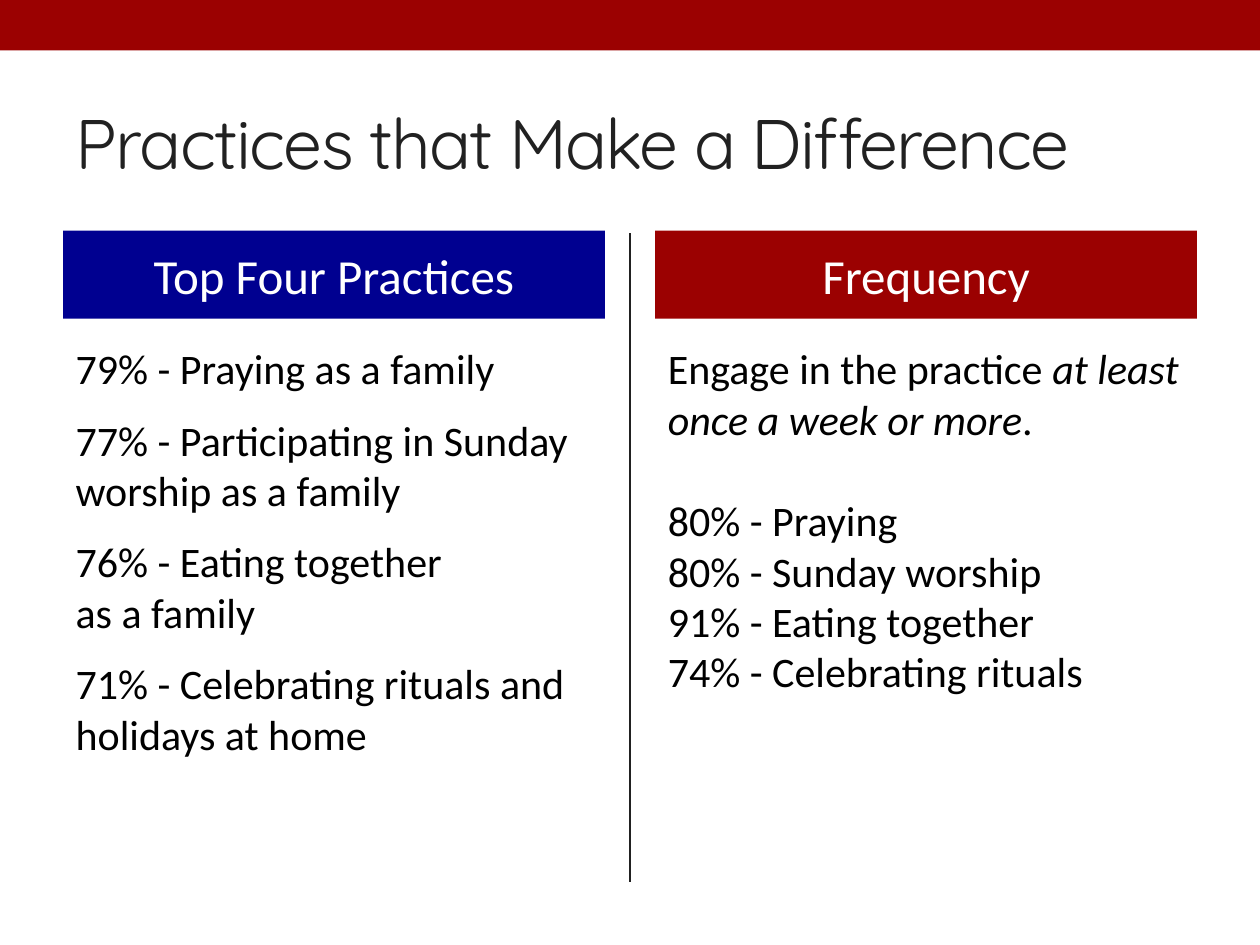
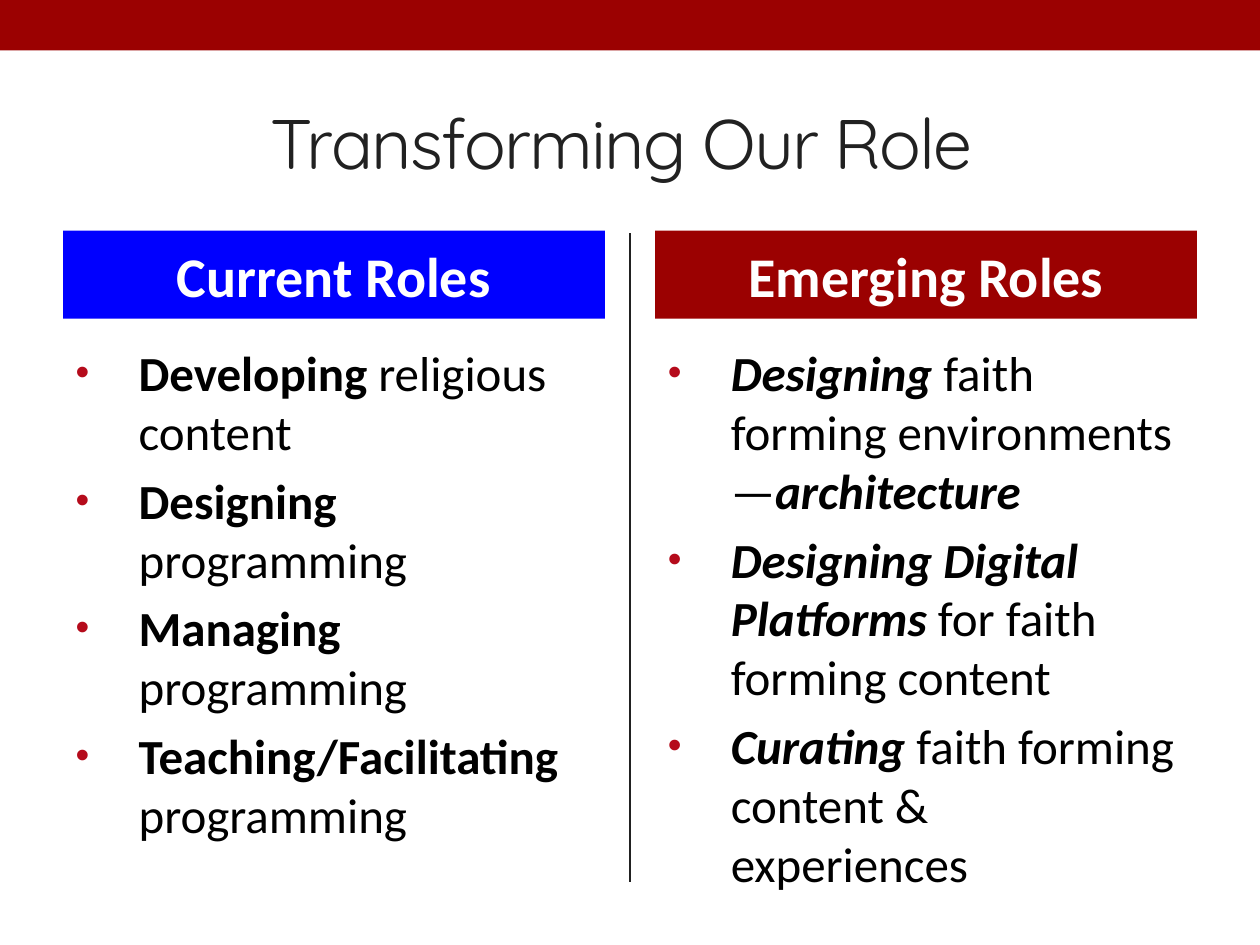
from dataclasses import dataclass

from lxml.etree import SubElement
from pptx import Presentation
from pptx.dml.color import RGBColor
from pptx.enum.shapes import MSO_CONNECTOR, MSO_SHAPE
from pptx.enum.text import MSO_ANCHOR, MSO_AUTO_SIZE, PP_ALIGN
from pptx.oxml.ns import qn
from pptx.util import Inches, Pt


@dataclass(frozen=True)
class Theme:
    # Colours
    crimson: str = "9B0101"
    navy: str = "000090"
    blue: str = "0000FF"
    bullet: str = "B50B1B"
    ink: str = "212121"
    black: str = "000000"
    white: str = "FFFFFF"
    # Fonts and sizes
    title_font: str = "Quicksand"
    body_font: str = "Calibri"
    title_size: int = 40
    heading_size: int = 28
    large_heading_size: int = 32
    text_size: int = 24
    bullet_size: int = 28


# Column geometry in inches
COLUMN_LEFTS = (0.5, 5.2)
COLUMN_WIDTH = 4.3
COMPARISON_LAYOUT = 4


class ComparisonDeck:
    """Builds slides with a title and two headed columns."""

    def __init__(self, theme):
        self.theme = theme
        self.presentation = Presentation()
        self.presentation.slide_width = Inches(10)
        self.presentation.slide_height = Inches(7.5)
        self.slide = None

    def new_slide(self):
        layout = self.presentation.slide_layouts[COMPARISON_LAYOUT]
        self.slide = self.presentation.slides.add_slide(layout)
        self.add_band()
        self.add_divider()

    def add_band(self):
        band = self.slide.shapes.add_shape(
            MSO_SHAPE.RECTANGLE, 0, 0, Inches(10), Inches(0.4))
        band.shadow.inherit = False
        self.fill(band, self.theme.crimson)
        band.line.fill.background()

    def add_divider(self):
        divider = self.slide.shapes.add_connector(
            MSO_CONNECTOR.STRAIGHT, Inches(5), Inches(1.85), Inches(5), Inches(7))
        divider.line.color.rgb = RGBColor.from_string(self.theme.ink)
        divider.line.width = Pt(1.5)
        SubElement(divider._element.spPr, qn("a:effectLst"))

    def add_title(self, text, alignment=PP_ALIGN.LEFT):
        frame = self.place(0, 0.5, 0.58, 9, 1.08, MSO_ANCHOR.MIDDLE).text_frame
        paragraph = frame.paragraphs[0]
        paragraph.alignment = alignment
        self.set_font(paragraph, self.theme.title_font,
                      self.theme.title_size, self.theme.ink)
        self.add_run(paragraph, text)._r.get_or_add_rPr().set("spc", "-100")

    def add_heading(self, column, text, color, size, bold=False):
        heading = self.place(1 + 2 * column, COLUMN_LEFTS[column], 1.83,
                             COLUMN_WIDTH, 0.7, MSO_ANCHOR.MIDDLE)
        self.fill(heading, color)
        paragraph = heading.text_frame.paragraphs[0]
        paragraph.alignment = PP_ALIGN.CENTER
        paragraph.space_before = Pt(0)
        self.set_font(paragraph, self.theme.body_font, size, self.theme.white)
        paragraph.font.bold = bold
        self.add_run(paragraph, text)

    def add_list(self, column, items, size, gaps, bulleted=False):
        """Each item is a list of (text, style); gaps are points before items."""
        frame = self.place(2 + 2 * column, COLUMN_LEFTS[column], 2.67,
                           COLUMN_WIDTH, 4.32, MSO_ANCHOR.TOP).text_frame
        for index, (item, gap) in enumerate(zip(items, gaps)):
            paragraph = frame.add_paragraph() if index else frame.paragraphs[0]
            self.set_bullet(paragraph, bulleted)
            paragraph.space_before = Pt(gap)
            self.set_font(paragraph, self.theme.body_font, size, self.theme.black)
            for text, style in item:
                self.add_run(paragraph, text, style)

    def place(self, index, left, top, width, height, anchor):
        shape = self.slide.placeholders[index]
        shape.left, shape.top = Inches(left), Inches(top)
        shape.width, shape.height = Inches(width), Inches(height)
        shape.text_frame.word_wrap = True
        shape.text_frame.auto_size = MSO_AUTO_SIZE.NONE
        shape.text_frame.vertical_anchor = anchor
        return shape

    def set_bullet(self, paragraph, bulleted):
        properties = paragraph._p.get_or_add_pPr()
        indent = Inches(0.5) if bulleted else 0
        properties.set("marL", str(indent))
        properties.set("indent", str(-indent))
        if not bulleted:
            SubElement(properties, qn("a:buNone"))
            return
        color = SubElement(properties, qn("a:buClr"))
        SubElement(color, qn("a:srgbClr"), val=self.theme.bullet)
        SubElement(properties, qn("a:buSzPct"), val="80000")
        SubElement(properties, qn("a:buFont"), typeface="Arial")
        SubElement(properties, qn("a:buChar"), char="•")

    @staticmethod
    def fill(shape, color):
        shape.fill.solid()
        shape.fill.fore_color.rgb = RGBColor.from_string(color)

    @staticmethod
    def set_font(paragraph, name, size, color):
        paragraph.font.name = name
        paragraph.font.size = Pt(size)
        paragraph.font.color.rgb = RGBColor.from_string(color)

    @staticmethod
    def add_run(paragraph, text, style=""):
        """Style holds b for bold and i for italic; \\v in text breaks the line."""
        for index, line in enumerate(text.split("\v")):
            if index:
                paragraph.add_line_break()
            run = paragraph.add_run()
            run.text = line
            if "b" in style:
                run.font.bold = True
            if "i" in style:
                run.font.italic = True
        return run


def add_practices_slide(deck):
    theme = deck.theme
    deck.new_slide()
    deck.add_title("Practices that Make a Difference")

    # Practices
    deck.add_heading(0, "Top Four Practices", theme.navy, theme.heading_size)
    practices = [
        "79% - Praying as a family",
        "77% - Participating in Sunday worship as a family",
        "76% - Eating together\vas a family",
        "71% - Celebrating rituals and holidays at home",
    ]
    deck.add_list(0, [[(text, "")] for text in practices],
                  theme.text_size, (0, 12, 12, 12))

    # Frequency, with one line of space below the introduction
    deck.add_heading(1, "Frequency", theme.crimson, theme.heading_size)
    introduction = [("Engage in the practice ", ""),
                    ("at least once a week or more", "i"), (".", "")]
    frequencies = ["80% - Praying", "80% - Sunday worship",
                   "91% - Eating together", "74% - Celebrating rituals"]
    deck.add_list(1, [introduction] + [[(text, "")] for text in frequencies],
                  theme.text_size, (0, 1.22 * theme.text_size, 0, 0, 0))


def add_roles_slide(deck):
    theme = deck.theme
    deck.new_slide()
    deck.add_title("Transforming Our Role ", PP_ALIGN.CENTER)

    current_roles = [
        [("Developing", "b"), (" religious content", "")],
        [("Designing", "b"), (" programming", "")],
        [("Managing ", "b"), ("programming", "")],
        [("Teaching/Facilitating", "b"), (" programming", "")],
    ]
    emerging_roles = [
        [("Designing", "bi"), (" faith forming environments—", ""),
         ("architecture", "bi")],
        [("Designing Digital Platforms", "bi"), (" for faith forming content", "")],
        [("Curating", "bi"), (" faith forming content &\vexperiences", "")],
    ]
    columns = (("Current Roles", theme.blue, current_roles),
               ("Emerging Roles", theme.crimson, emerging_roles))
    gap = 0.2 * theme.bullet_size
    for column, (heading, color, roles) in enumerate(columns):
        deck.add_heading(column, heading, color, theme.large_heading_size, bold=True)
        deck.add_list(column, roles, theme.bullet_size,
                      [0] + [gap] * (len(roles) - 1), bulleted=True)


def main():
    deck = ComparisonDeck(Theme())
    add_practices_slide(deck)
    add_roles_slide(deck)
    deck.presentation.save("out.pptx")


if __name__ == "__main__":
    main()
